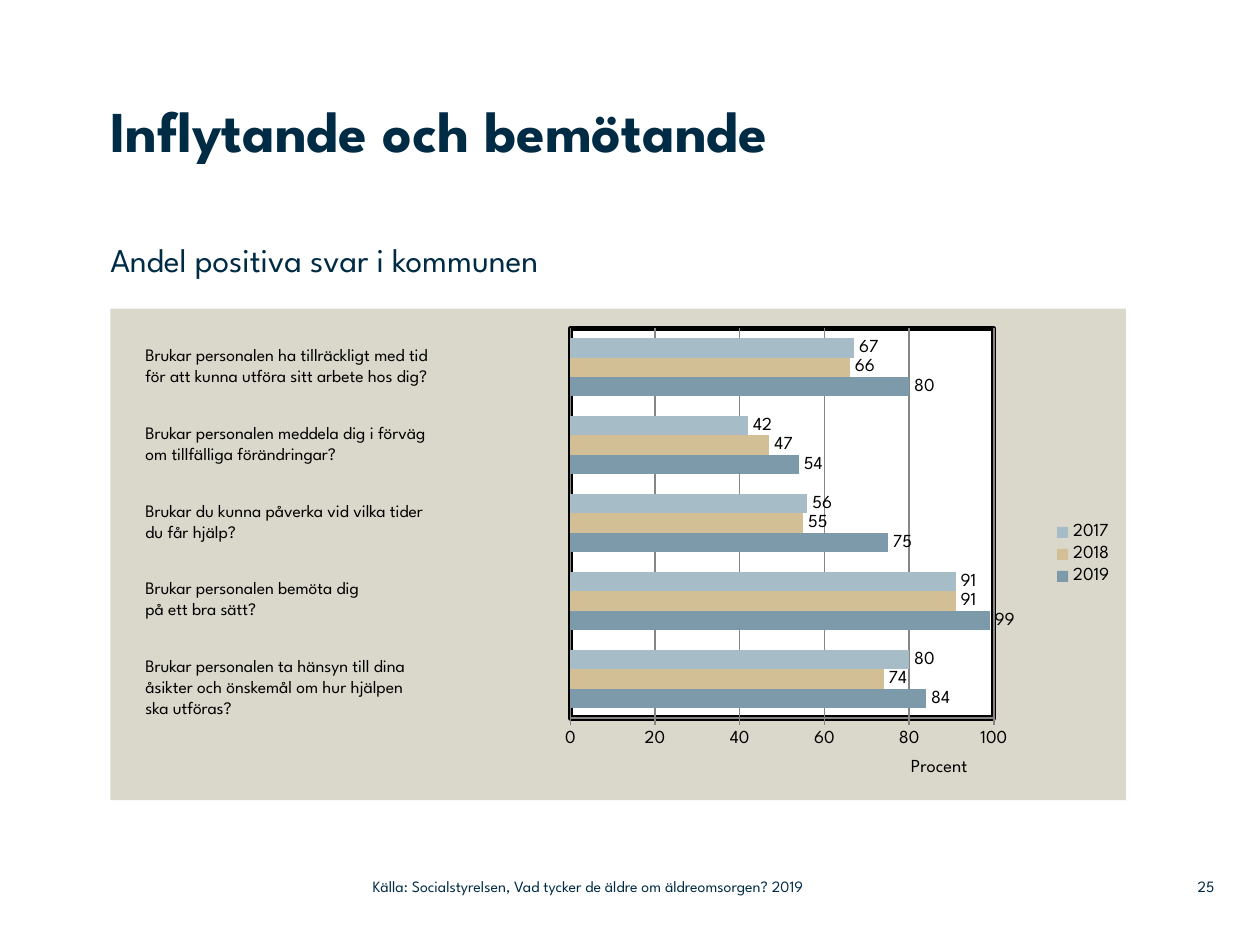
from dataclasses import dataclass

from lxml import etree
from pptx import Presentation
from pptx import util as u
from pptx.chart import data as chart_data
from pptx.dml import color as c
from pptx.enum import chart as ch, text as t
from pptx.oxml import ns


@dataclass(frozen=True)
class Theme:
    font: str = "League Spartan"
    navy: str = "002B45"
    black: str = "000000"
    white: str = "FFFFFF"
    grid: str = "868686"
    panel: str = "DAD7CB"
    title: float = 33
    subtitle: float = 19
    label: float = 10
    chart: float = 10.5
    footer: float = 9


THEME = Theme()

YEARS = [
    ("2019", (84, 99, 75, 54, 80), "7D9AAA"),
    ("2018", (74, 91, 55, 47, 66), "D3BF96"),
    ("2017", (80, 91, 56, 42, 67), "A6BCC6"),
]
QUESTIONS = [
    "Brukar personalen ha tillräckligt med tid\nför att kunna utföra sitt arbete hos dig?",
    "Brukar personalen meddela dig i förväg\nom tillfälliga förändringar?",
    "Brukar du kunna påverka vid vilka tider\ndu får hjälp?",
    "Brukar personalen bemöta dig\npå ett bra sätt?",
    "Brukar personalen ta hänsyn till dina\nåsikter och önskemål om hur hjälpen\nska utföras?",
]


def set_font(font, size, color, bold=False):
    values = {"name": THEME.font, "size": u.Pt(size), "bold": bold}
    for name, value in values.items():
        setattr(font, name, value)
    font.color.rgb = c.RGBColor.from_string(color)


def set_line(line, color, width):
    line.color.rgb = c.RGBColor.from_string(color)
    line.width = u.Pt(width)


def place(shape, box):
    for name, value in zip(("left", "top", "width", "height"), box):
        setattr(shape, name, u.Pt(value))


def fill_frame(shape, text, size, color, bold=False, inset=(0, 0),
               align=t.PP_ALIGN.LEFT, anchor=t.MSO_ANCHOR.TOP,
               auto_size=t.MSO_AUTO_SIZE.NONE):
    frame = shape.text_frame
    side, end = (u.Pt(value) for value in inset)
    values = {"word_wrap": True, "auto_size": auto_size, "vertical_anchor": anchor,
              "margin_left": side, "margin_right": side,
              "margin_top": end, "margin_bottom": end}
    for name, value in values.items():
        setattr(frame, name, value)
    paragraph = frame.paragraphs[0]
    paragraph.text = text
    paragraph.alignment = align
    for run in paragraph.runs:
        set_font(run.font, size, color, bold)


def add_text(slide, box, text, size, color, **options):
    shape = slide.shapes.add_textbox(*(u.Pt(value) for value in box))
    fill_frame(shape, text, size, color, **options)


def set_layout(parent, index, **values):
    """Give a chart part a manual layout, as fractions of the chart."""
    for old in parent.findall(ns.qn("c:layout")):
        parent.remove(old)
    layout = etree.Element(ns.qn("c:layout"))
    manual = etree.SubElement(layout, ns.qn("c:manualLayout"))
    for name, value in values.items():
        etree.SubElement(manual, ns.qn(f"c:{name}")).set("val", str(value))
    parent.insert(index, layout)


def style_plot_area(chart):
    area = chart.plots[0]._element.getparent()
    set_layout(area, 0, layoutTarget="inner", xMode="edge", yMode="edge",
               x=0.453, y=0.04, w=0.417, h=0.793)
    area.append(etree.fromstring(
        f'<c:spPr {ns.nsdecls("c", "a")}>'
        f'<a:solidFill><a:srgbClr val="{THEME.white}"/></a:solidFill>'
        f'<a:ln w="{u.Pt(3)}"><a:solidFill><a:srgbClr val="{THEME.black}"/>'
        '</a:solidFill></a:ln></c:spPr>'))
    # Panel behind the whole chart
    chart._chartSpace.chart.addnext(etree.fromstring(
        f'<c:spPr {ns.nsdecls("c", "a")}>'
        f'<a:solidFill><a:srgbClr val="{THEME.panel}"/></a:solidFill>'
        '<a:ln><a:noFill/></a:ln></c:spPr>'))


def style_axes(chart):
    chart.category_axis.visible = False
    axis = chart.value_axis
    values = {"minimum_scale": 0, "maximum_scale": 100, "major_unit": 20,
              "has_major_gridlines": True,
              "major_tick_mark": ch.XL_TICK_MARK.OUTSIDE,
              "minor_tick_mark": ch.XL_TICK_MARK.NONE}
    for name, value in values.items():
        setattr(axis, name, value)
    set_line(axis.major_gridlines.format.line, THEME.grid, 0.75)
    set_line(axis.format.line, THEME.grid, 0.75)
    set_font(axis.tick_labels.font, THEME.chart, THEME.black)
    paragraph = axis.axis_title.text_frame.paragraphs[0]
    paragraph.text = "Procent"
    set_font(paragraph.runs[0].font, THEME.chart, THEME.black)
    set_layout(axis.axis_title._element, 1, xMode="edge", yMode="edge",
               x=0.785, y=0.905)


def add_year_chart(slide, box):
    data = chart_data.CategoryChartData()
    data.categories = [str(number + 1) for number in range(len(QUESTIONS))]
    for year, shares, _ in YEARS:
        data.add_series(year, shares)
    chart = slide.shapes.add_chart(ch.XL_CHART_TYPE.BAR_CLUSTERED,
                                   *(u.Pt(value) for value in box), data).chart
    chart.has_title = False
    set_font(chart.font, THEME.label, THEME.black)

    # Bars and their values
    plot = chart.plots[0]
    plot.gap_width, plot.overlap, plot.vary_by_categories = 100, 0, False
    for series, (_, _, color) in zip(plot.series, YEARS):
        series.format.fill.solid()
        series.format.fill.fore_color.rgb = c.RGBColor.from_string(color)
        labels = series.data_labels
        labels.show_value = True
        labels.position = ch.XL_LABEL_POSITION.OUTSIDE_END
        set_font(labels.font, THEME.chart, THEME.black)

    # Legend, axes and backgrounds
    chart.has_legend = True
    chart.legend.position = ch.XL_LEGEND_POSITION.RIGHT
    chart.legend.include_in_layout = False
    set_font(chart.legend.font, THEME.chart, THEME.black)
    style_axes(chart)
    style_plot_area(chart)


def add_questions(slide, box):
    left, top, width, height = box
    step = height / len(QUESTIONS)
    for row, question in enumerate(QUESTIONS):
        lines = question.count("\n") + 1
        add_text(slide, (left, top + row * step, width, 7.2 + 12.2 * lines),
                 question, THEME.label, THEME.black, inset=(7.2, 3.6),
                 auto_size=t.MSO_AUTO_SIZE.SHAPE_TO_FIT_TEXT)


def add_heading(slide, box):
    left, top, width, height = box
    place(slide.shapes.title, (left, top, width, 102))
    fill_frame(slide.shapes.title, "Inflytande och bemötande",
               THEME.title, THEME.navy, bold=True)
    add_text(slide, (left, top + height - 32, 489, 32),
             "Andel positiva svar i kommunen", THEME.subtitle, THEME.navy)


def add_footer(slide, box):
    left, top, width, height = box
    add_text(slide, (left, top, 319, height),
             "Källa: Socialstyrelsen, Vad tycker de äldre om äldreomsorgen? 2019",
             THEME.footer, THEME.navy, anchor=t.MSO_ANCHOR.MIDDLE)
    add_text(slide, (left + width - 34, top, 32, height), "25", THEME.footer,
             THEME.navy, align=t.PP_ALIGN.RIGHT, anchor=t.MSO_ANCHOR.MIDDLE)


def main():
    presentation = Presentation()
    presentation.slide_width, presentation.slide_height = u.Pt(720), u.Pt(540)
    slide = presentation.slides.add_slide(presentation.slide_layouts[5])
    add_heading(slide, (63, 54, 602, 115))
    add_year_chart(slide, (63, 176.4, 580.4, 280.8))
    add_questions(slide, (76, 193.2, 240, 222))
    add_footer(slide, (213, 496, 483, 21))
    presentation.save("out.pptx")


if __name__ == "__main__":
    main()
